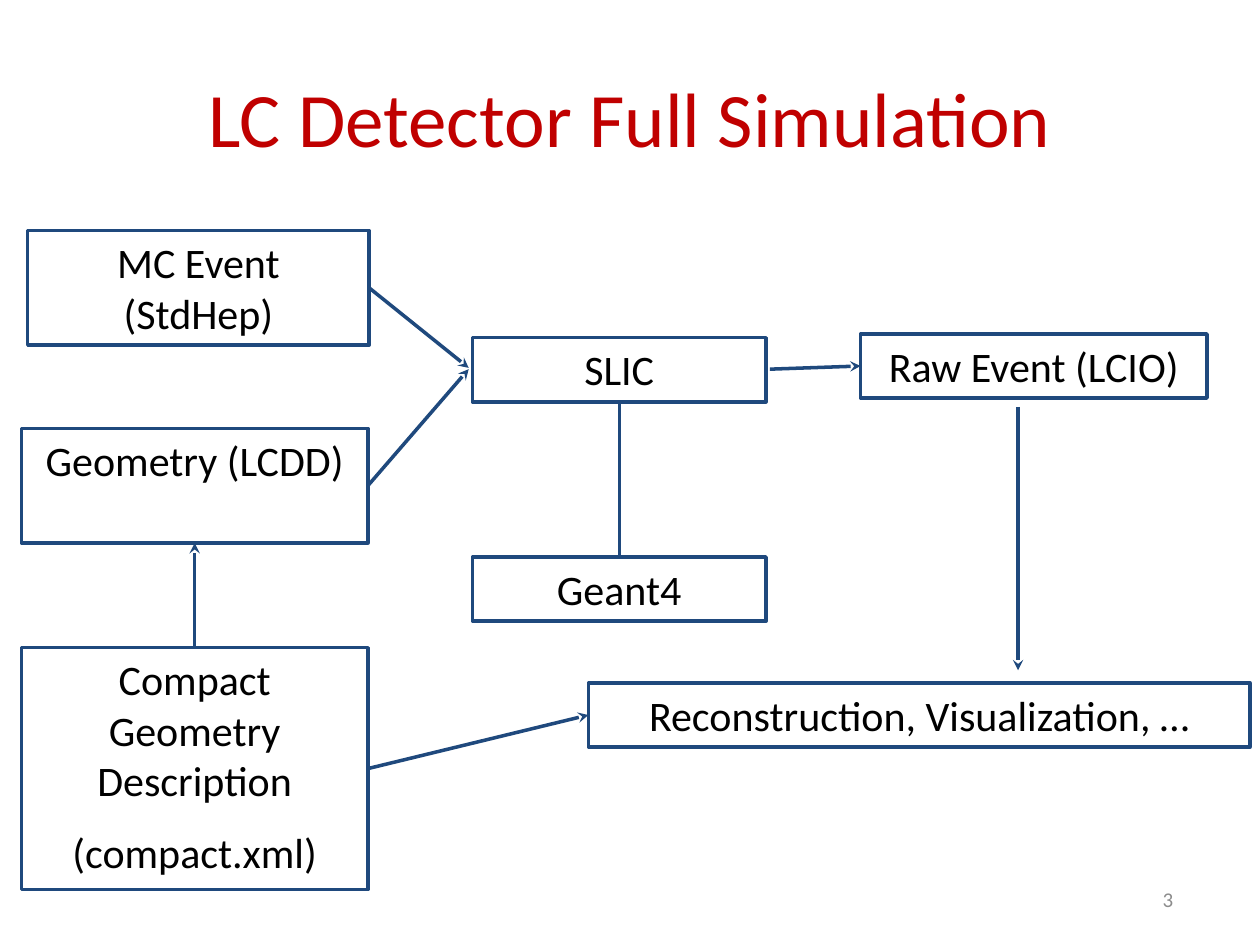
from pptx import Presentation
from pptx.dml.color import RGBColor
from pptx.enum.shapes import MSO_CONNECTOR, MSO_SHAPE
from pptx.enum.text import MSO_ANCHOR, PP_ALIGN
from pptx.oxml.ns import qn
from pptx.util import Inches, Pt
from lxml import etree

STRAIGHT = MSO_CONNECTOR.STRAIGHT
RECTANGLE = MSO_SHAPE.RECTANGLE
TOP, MIDDLE = MSO_ANCHOR.TOP, MSO_ANCHOR.MIDDLE
CENTER, RIGHT = PP_ALIGN.CENTER, PP_ALIGN.RIGHT
SITE_TOP, SITE_LEFT, SITE_BOTTOM, SITE_RIGHT = range(4)

COLORS = {
    "title": "C00000",
    "text": "000000",
    "number": "8C8C8C",
    "line": "1F497D",
    "white": "FFFFFF",
}


def rgb(name):
    return RGBColor.from_string(COLORS[name])


class Diagram:
    font = "Calibri"
    line_width = Pt(2)
    box_size = 24
    paragraph_gap = Pt(12)

    def __init__(self, slide):
        self.slide = slide

    def set_text(self, sp, lines, size, color, align, anchor):
        tf = sp.text_frame
        tf.word_wrap = True
        tf.vertical_anchor = anchor
        for i, line in enumerate(lines):
            p = tf.add_paragraph() if i else tf.paragraphs[0]
            p.text = line
            p.alignment = align
            p.space_before = self.paragraph_gap if i else Pt(0)
            p.font.name = self.font
            p.font.size = Pt(size)
            p.font.color.rgb = rgb(color)

    def label(self, text, x, y, w, h, size, color, align):
        sp = self.slide.shapes.add_textbox(Inches(x), Inches(y), Inches(w), Inches(h))
        self.set_text(sp, [text], size, color, align, MIDDLE)

    def box(self, lines, x, y, w, h, fill=None):
        sp = self.slide.shapes.add_shape(
            RECTANGLE, Inches(x), Inches(y), Inches(w), Inches(h))
        sp.shadow.inherit = False
        if fill:
            sp.fill.solid()
            sp.fill.fore_color.rgb = rgb(fill)
        else:
            sp.fill.background()
        sp.line.color.rgb = rgb("line")
        sp.line.width = self.line_width
        self.set_text(sp, lines, self.box_size, "text", CENTER, TOP)
        return sp

    def connect(self, start, end, begin=None, finish=None, arrow=True):
        cx = self.slide.shapes.add_connector(
            STRAIGHT, *(Inches(v) for v in start + end))
        if begin:
            cx.begin_connect(*begin)
        if finish:
            cx.end_connect(*finish)
        cx.line.color.rgb = rgb("line")
        cx.line.width = self.line_width
        props = cx.element.spPr
        if arrow:
            etree.SubElement(props.find(qn("a:ln")), qn("a:tailEnd"), type="stealth")
        etree.SubElement(props, qn("a:effectLst"))


def main():
    prs = Presentation()
    prs.slide_width, prs.slide_height = Inches(10), Inches(7.5)
    s = prs.slides.add_slide(prs.slide_layouts[6])
    d = Diagram(s)

    d.label("LC Detector Full Simulation", 0.5, 0.3, 9, 1.25, 44, "title", CENTER)
    d.label("3", 7.08, 6.94, 2.33, 0.4, 12, "number", RIGHT)

    event = d.box(["MC Event (StdHep)"], 0.22, 1.83, 2.71, 0.91)
    geometry = d.box(["Geometry (LCDD)"], 0.17, 3.4, 2.75, 0.91)
    raw = d.box(["Raw Event (LCIO)"], 6.83, 2.65, 2.75, 0.51)
    geant = d.box(["Geant4"], 3.75, 4.42, 2.33, 0.51)
    slic = d.box(["SLIC"], 3.75, 2.68, 2.33, 0.51, "white")
    compact = d.box(["Compact Geometry Description", "(compact.xml)"],
                    0.17, 5.14, 2.75, 1.92)
    reconstruction = d.box(["Reconstruction, Visualization, …"],
                           4.67, 5.42, 5.25, 0.51)

    d.connect((2.93, 2.29), (3.72, 2.92), begin=(event, SITE_RIGHT))
    d.connect((2.92, 3.86), (3.72, 2.93), begin=(geometry, SITE_RIGHT))
    d.connect((6.11, 2.93), (6.83, 2.9), finish=(raw, SITE_LEFT))
    d.connect((4.92, 3.19), (4.92, 4.42), (slic, SITE_BOTTOM),
              (geant, SITE_TOP), arrow=False)
    d.connect((1.54, 5.14), (1.54, 4.31), (compact, SITE_TOP),
              (geometry, SITE_BOTTOM))
    d.connect((2.92, 6.1), (4.67, 5.68), (compact, SITE_RIGHT),
              (reconstruction, SITE_LEFT))
    d.connect((8.08, 3.23), (8.08, 5.32))

    prs.save("out.pptx")


if __name__ == "__main__":
    main()
